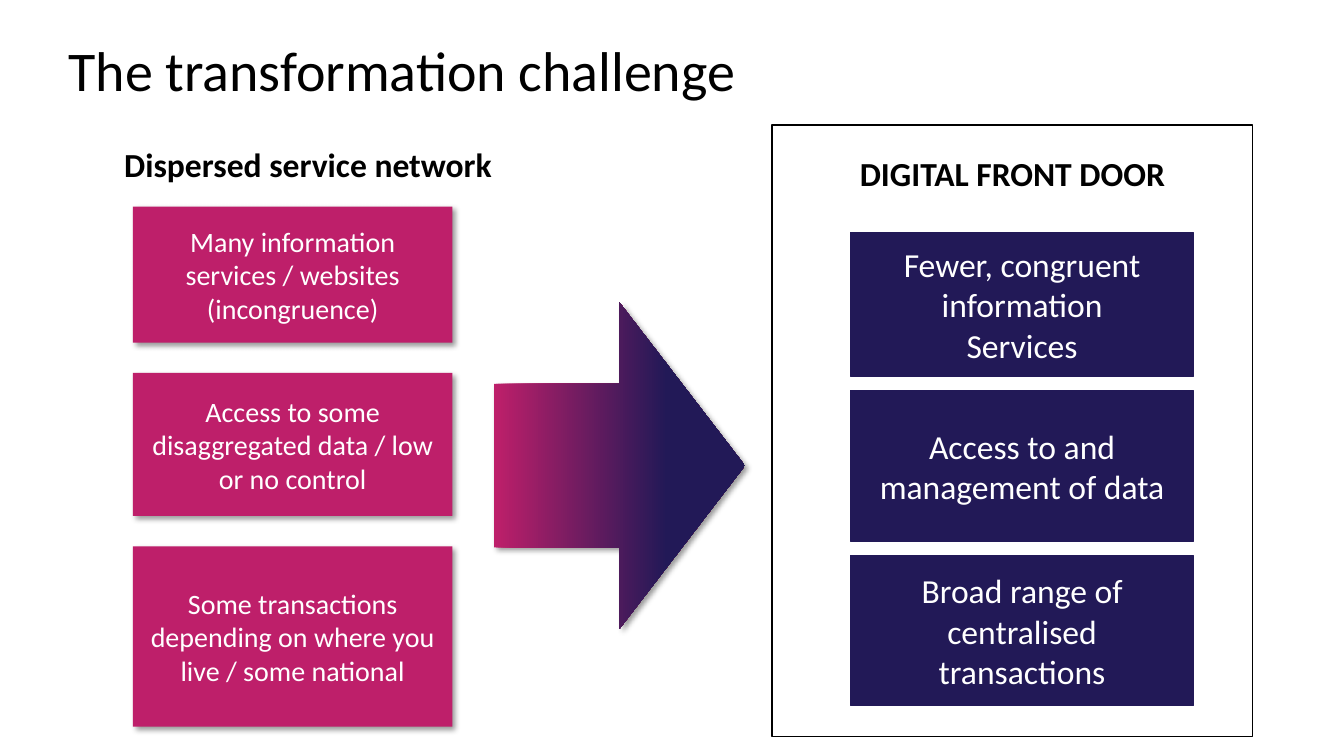
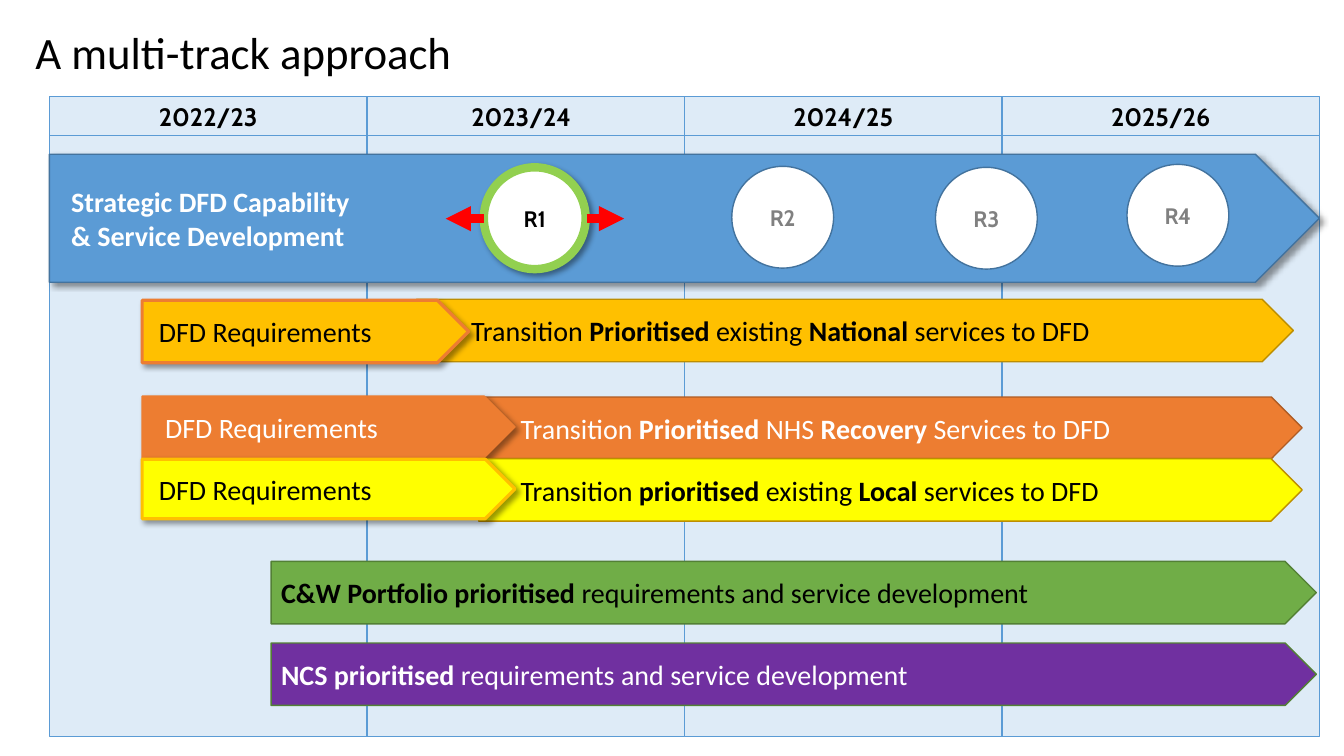
import pptx
import pptx.dml.color
import pptx.enum.shapes
import pptx.enum.text
import pptx.oxml
import pptx.oxml.ns
import pptx.util

Pt = pptx.util.Pt
SHAPE = pptx.enum.shapes.MSO_SHAPE
ALIGN = pptx.enum.text.PP_ALIGN
ANCHOR = pptx.enum.text.MSO_ANCHOR

BLACK, WHITE, GREY = "000000", "FFFFFF", "808080"
PINK, NAVY = "BE1F6A", "221957"
BLUE, PALE_BLUE, DARK_BLUE = "5B9BD5", "DEEBF7", "43739E"
AMBER, DARK_AMBER = "FFC000", "BD8E00"
ORANGE, DARK_ORANGE = "ED7D31", "AF5C24"
YELLOW, RED, LIME = "FFFF00", "FF0000", "92D050"
GREEN, DARK_GREEN, PURPLE = "70AD47", "538035", "7030A0"


def rgb(value):
    return pptx.dml.color.RGBColor.from_string(value)


def write(sp, text, size=20, color=BLACK, font="Calibri", bold=False,
          align=ALIGN.LEFT, anchor=ANCHOR.MIDDLE, inset=7.2, spacing=None):
    """Each line is a paragraph; words between ** marks are bold."""
    tf = sp.text_frame
    tf.word_wrap = True
    tf.auto_size = pptx.enum.text.MSO_AUTO_SIZE.NONE
    tf.vertical_anchor = anchor
    tf.margin_left, tf.margin_right = Pt(inset), Pt(7.2)
    tf.margin_top = tf.margin_bottom = Pt(3.6)
    for i, line in enumerate(text.split("\n")):
        p = tf.paragraphs[0] if i == 0 else tf.add_paragraph()
        p.alignment = align
        p.line_spacing = spacing
        for j, part in enumerate(line.split("**")):
            if part:
                r = p.add_run()
                r.text = part
                r.font.size, r.font.name = Pt(size), font
                r.font.bold = bold or j % 2 == 1
                r.font.color.rgb = rgb(color)


def add_title(s, text, x, y, w, h, **fmt):
    sp = s.shapes.title
    sp.left, sp.top, sp.width, sp.height = Pt(x), Pt(y), Pt(w), Pt(h)
    write(sp, text, anchor=ANCHOR.TOP, **fmt)


def add_label(s, text, x, y, w, h, **fmt):
    sp = s.shapes.add_textbox(Pt(x), Pt(y), Pt(w), Pt(h))
    write(sp, text, bold=True, align=ALIGN.CENTER, anchor=ANCHOR.TOP, **fmt)


def add_effects(sp, shadow=False):
    """Set the drop shadow, or an empty effect list."""
    inner = ('<a:outerShdw blurRad="50800" dist="38100" dir="2700000" '
             'algn="tl" rotWithShape="0"><a:srgbClr val="000000">'
             '<a:alpha val="40000"/></a:srgbClr></a:outerShdw>')
    sp._element.spPr.append(pptx.oxml.parse_xml(
        "<a:effectLst %s>%s</a:effectLst>"
        % (pptx.oxml.ns.nsdecls("a"), inner if shadow else "")))


def add_shape(s, kind, x, y, w, h, fill, line=None, width=1, shadow=False):
    sp = s.shapes.add_shape(kind, Pt(x), Pt(y), Pt(w), Pt(h))
    sp.fill.solid()
    sp.fill.fore_color.rgb = rgb(fill)
    if line:
        sp.line.color.rgb = rgb(line)
        sp.line.width = Pt(width)
    else:
        sp.line.fill.background()
    if shadow:
        add_effects(sp, shadow=True)
    else:
        sp.shadow.inherit = False
    return sp


def add_line(s, x1, y1, x2, y2, color, width, arrow=False):
    cn = s.shapes.add_connector(pptx.enum.shapes.MSO_CONNECTOR.STRAIGHT,
                                Pt(x1), Pt(y1), Pt(x2), Pt(y2))
    cn.line.color.rgb = rgb(color)
    cn.line.width = Pt(width)
    if arrow:
        cn.line._get_or_add_ln().append(pptx.oxml.parse_xml(
            '<a:tailEnd %s type="triangle"/>' % pptx.oxml.ns.nsdecls("a")))
    add_effects(cn)


# Slide 1: from many services to one front door
def add_cards(s, x, y, w, gap, cards, fill, size, line=None, shadow=False):
    for text, h in cards:
        sp = add_shape(s, SHAPE.RECTANGLE, x, y, w, h, fill, line, 0.5, shadow)
        write(sp, text, size=size, color=WHITE, align=ALIGN.CENTER)
        y += h + gap


def front_door(s, x, y, w, h):
    add_shape(s, SHAPE.RECTANGLE, x, y, w, h, WHITE, BLACK)
    add_label(s, "DIGITAL FRONT DOOR", x, y + 16.6, w, 36, size=24)
    cards = [("Fewer, congruent information\nServices", 102.4),
             ("Access to and management of data", 107.3),
             ("Broad range of centralised transactions", 107.3)]
    add_cards(s, x + 56.2, y + 77, 244.8, 10.4, cards, NAVY, 24, line=NAVY)


def service_network(s, x, y, w):
    add_label(s, "Dispersed service network", x, y, w, 36.7, size=24)
    cards = [("Many information\nservices / websites\n(incongruence)", 97.2),
             ("Access to some disaggregated data / low or no control", 102.2),
             ("Some transactions depending on where you live / some national",
              128.9)]
    add_cards(s, x + 46.6, y + 48.2, 228.2, 21.6, cards, PINK, 20, shadow=True)


def change_arrow(s, x, y, w, h):
    sp = add_shape(s, SHAPE.RIGHT_ARROW, x, y, w, h, PINK, shadow=True)
    sp.fill.gradient()
    sp.fill.gradient_angle = 0
    for stop, pos, color in zip(sp.fill.gradient_stops, (0, 0.69), (PINK, NAVY)):
        stop.position = pos
        stop.color.rgb = rgb(color)


def challenge_slide(prs):
    s = prs.slides.add_slide(prs.slide_layouts[5])
    add_title(s, "The transformation challenge", 41.8, 21.6, 722, 55.4, size=40)
    front_door(s, 551.5, 89.3, 343.4, 437)
    service_network(s, 48.4, 99.4, 343.4)
    change_arrow(s, 352.8, 216, 179.3, 233.3)


# Slide 2: tracks over four years
def calendar(s, x, y, w, h):
    # Each year with the shift of its label from the column centre
    years = [("2022/23", 0), ("2023/24", -3.2), ("2024/25", 0), ("2025/26", 0)]
    col = w / len(years)
    for i in range(len(years)):
        add_shape(s, SHAPE.RECTANGLE, x + i * col, y, col, h, PALE_BLUE, BLUE)
    add_line(s, x, y + 27.4, x + w, y + 27.4, BLUE, 0.5)
    for i, (year, shift) in enumerate(years):
        add_label(s, year, x + i * col + shift, y, col, 28.8,
                  size=18, font="Cabin")


def add_bar(s, x, y, w, h, text, fill, line, color=BLACK, inset=7.2,
            width=1, shadow=False, bold=False):
    sp = add_shape(s, SHAPE.PENTAGON, x, y, w, h, fill, line, width, shadow)
    write(sp, text, color=color, inset=inset, bold=bold)


def release(s, x, y, name, color=GREY, line=DARK_BLUE, width=1, shadow=False):
    sp = add_shape(s, SHAPE.OVAL, x, y, 72.7, 72.7, WHITE, line, width, shadow)
    write(sp, name, size=16, color=color, font="Cabin", bold=True,
          align=ALIGN.CENTER)


def strategic_band(s, x, y, w, h):
    add_bar(s, x, y, w, h, "Strategic DFD Capability\n& Service Development",
            BLUE, DARK_BLUE, WHITE, inset=15.6, shadow=True, bold=True)
    for name, dx, dy in [("R2", 487.4, 8.6), ("R3", 632.9, 9.3),
                         ("R4", 769.7, 7.2)]:
        release(s, x + dx, y + dy, name)
    # First release, which may move either way
    left, mid = x + 310.3, y + 46
    release(s, left, y + 9.3, "R1", BLACK, LIME, 6, shadow=True)
    for start, step in [(left + 73.4, 26.8), (left, -27.2)]:
        add_line(s, start, mid, start + step, mid, RED, 6, arrow=True)


def tracks(s, x, y):
    req = "DFD Requirements"
    # Transition bars, each followed by the requirements bar that overlaps it
    add_bar(s, x + 196, y, 626.4, 44.6,
            "Transition **Prioritised** existing **National** services to DFD",
            AMBER, DARK_AMBER, inset=39)
    add_bar(s, x, y + 0.7, 233.3, 44.6, req, AMBER, ORANGE, inset=12,
            width=2.25, shadow=True)
    add_bar(s, x + 240.5, y + 69.8, 588.2, 44,
            "Transition **Prioritised** NHS **Recovery** Services to DFD",
            ORANGE, DARK_ORANGE, WHITE, inset=30)
    add_bar(s, x, y + 69.2, 266.4, 44, req, ORANGE, ORANGE, WHITE, inset=16.4,
            shadow=True)
    add_bar(s, x + 240.5, y + 113.8, 588.2, 44.6,
            "Transition **prioritised** existing **Local** services to DFD",
            YELLOW, DARK_AMBER, inset=30)
    add_bar(s, x, y + 114.2, 266.4, 42.5, req, YELLOW, AMBER, inset=12,
            width=2.25, shadow=True)
    # Portfolio bars
    for dy, lead, fill, color in [(187.2, "C&W Portfolio", GREEN, BLACK),
                                  (245.5, "NCS", PURPLE, WHITE)]:
        add_bar(s, x + 92.2, y + dy, 746.6, 44.6,
                "**%s prioritised** requirements and service development" % lead,
                fill, DARK_GREEN, color)


def approach_slide(prs):
    s = prs.slides.add_slide(prs.slide_layouts[5])
    add_title(s, "A multi-track approach", 18, 18.7, 564.5, 36, size=32,
              spacing=0.9)
    calendar(s, 35.3, 69.1, 907.2, 457.2)
    strategic_band(s, 35.3, 110.2, 907.2, 91.4)
    tracks(s, 101.5, 213.8)


def main():
    prs = pptx.Presentation()
    prs.slide_width, prs.slide_height = Pt(960), Pt(540)
    challenge_slide(prs)
    approach_slide(prs)
    prs.save("out.pptx")


if __name__ == "__main__":
    main()
